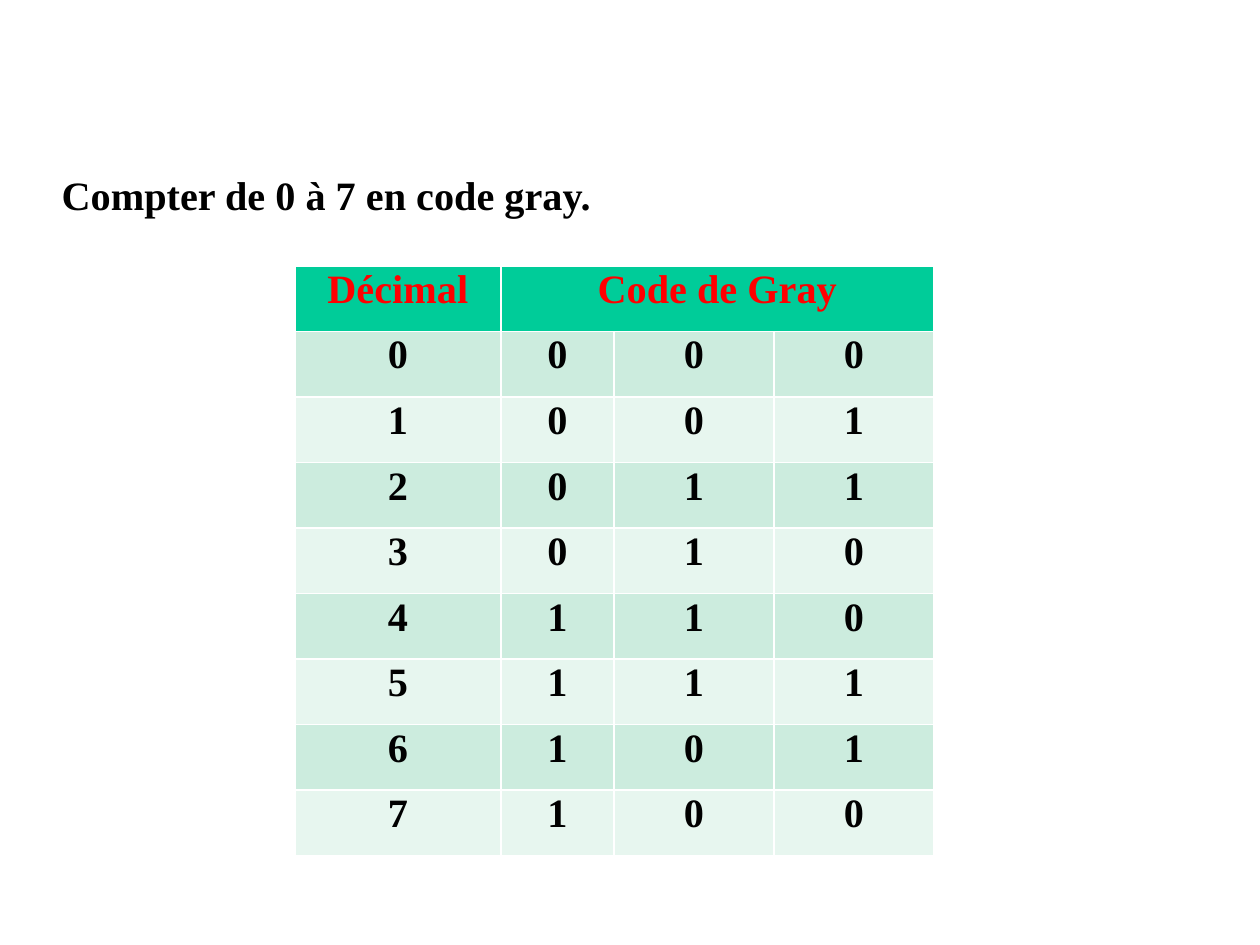
from lxml import etree
from pptx import Presentation
from pptx import util as u
from pptx.dml.color import RGBColor
from pptx.enum import text
from pptx.oxml import ns

PX = 914400 // 126
BLACK, RED, WHITE = "000000", "FF0000", "FFFFFF"
HEAD, BANDS = "00CC99", ("CCECDE", "E7F6EF")
COLS = (206, 113, 160, 160)
COUNT, BITS = 8, 3


def px(n):
    return u.Emu(n * PX)


def rgb(code):
    return RGBColor.from_string(code)


def add_run(para, words, color):
    run = para.add_run()
    run.text = words
    font = run.font
    font.name, font.size, font.bold = "Times New Roman", u.Pt(23), True
    font.color.rgb = rgb(color)


def add_lead(slide, words):
    """Place the sentence above the table in the body placeholder."""
    body = slide.placeholders[1]
    body.left, body.top, body.width, body.height = map(px, (49, 168, 1172, 59))
    frame = body.text_frame
    frame.auto_size = text.MSO_AUTO_SIZE.NONE
    frame.vertical_anchor = text.MSO_ANCHOR.TOP
    para = frame.paragraphs[0]
    para.line_spacing, para.space_before = 0.93, u.Pt(8)
    props = para._p.get_or_add_pPr()
    props.set("marL", str(px(47)))
    props.set("indent", str(px(-47)))
    etree.SubElement(props, ns.qn("a:buNone"))
    add_run(para, words, BLACK)


def add_rules(cell):
    """Draw thin white borders on all four sides of a cell."""
    props = cell._tc.get_or_add_tcPr()
    for side in "LRTB":
        line = etree.SubElement(props, ns.qn("a:ln" + side), w=str(u.Pt(1)))
        fill = etree.SubElement(line, ns.qn("a:solidFill"))
        etree.SubElement(fill, ns.qn("a:srgbClr"), val=WHITE)


def fill_cell(cell, words, color, back):
    add_rules(cell)
    cell.fill.solid()
    cell.fill.fore_color.rgb = rgb(back)
    if words:
        para = cell.text_frame.paragraphs[0]
        para.alignment = text.PP_ALIGN.CENTER
        para.line_spacing = 0.87
        add_run(para, words, color)


def add_codes(slide):
    """Add the table of numbers and their Gray codes."""
    frame = slide.shapes.add_table(
        COUNT + 1, len(COLS), px(295), px(266), px(sum(COLS)), px(590))
    table = frame.table
    for col, width in zip(table.columns, COLS):
        col.width = px(width)
    table.cell(0, 1).merge(table.cell(0, BITS))
    for c, words in enumerate(("Décimal", "Code de Gray", "", "")):
        fill_cell(table.cell(0, c), words, RED, HEAD)
    for n in range(COUNT):
        gray = format(n ^ (n >> 1), f"0{BITS}b")
        for c, words in enumerate((str(n), *gray)):
            fill_cell(table.cell(n + 1, c), words, BLACK, BANDS[n % 2])


def main():
    deck = Presentation()
    deck.slide_width, deck.slide_height = u.Inches(10), u.Inches(7.5)
    slide = deck.slides.add_slide(deck.slide_layouts[1])
    title = slide.shapes.title.element
    title.getparent().remove(title)
    add_lead(slide, "Compter de 0 à 7 en code gray.")
    add_codes(slide)
    deck.save("out.pptx")


if __name__ == "__main__":
    main()
